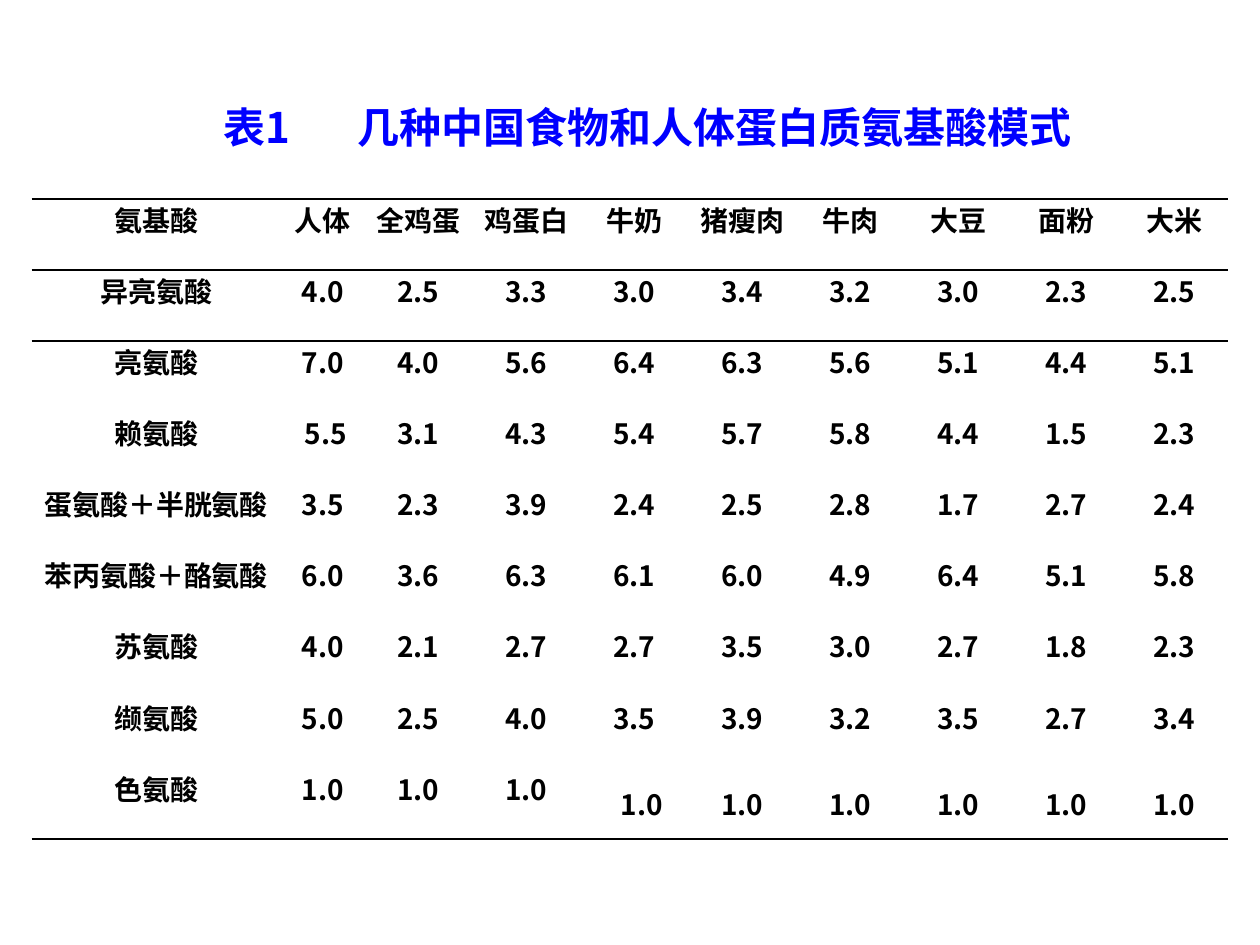
import pptx
import pptx.dml.color
import pptx.enum.text
import pptx.oxml
import pptx.oxml.ns
import pptx.util

Inches = pptx.util.Inches
Pt = pptx.util.Pt
ANCHOR = pptx.enum.text.MSO_ANCHOR
ALIGN = pptx.enum.text.PP_ALIGN
NS = pptx.oxml.ns.nsdecls("a")

COLORS = {"title": "0000FF", "text": "000000", "rule": "000000"}
PLAIN_STYLE = "{2D5ABB26-0587-4C30-8999-92F81FD0307C}"

HEADINGS = ["氨基酸", "人体", "全鸡蛋", "鸡蛋白", "牛奶", "猪瘦肉", "牛肉", "大豆", "面粉", "大米"]
AMINO_ACIDS = {
    "异亮氨酸": [4.0, 2.5, 3.3, 3.0, 3.4, 3.2, 3.0, 2.3, 2.5],
    "亮氨酸": [7.0, 4.0, 5.6, 6.4, 6.3, 5.6, 5.1, 4.4, 5.1],
    "赖氨酸": [5.5, 3.1, 4.3, 5.4, 5.7, 5.8, 4.4, 1.5, 2.3],
    "蛋氨酸＋半胱氨酸": [3.5, 2.3, 3.9, 2.4, 2.5, 2.8, 1.7, 2.7, 2.4],
    "苯丙氨酸＋酪氨酸": [6.0, 3.6, 6.3, 6.1, 6.0, 4.9, 6.4, 5.1, 5.8],
    "苏氨酸": [4.0, 2.1, 2.7, 2.7, 3.5, 3.0, 2.7, 1.8, 2.3],
    "缬氨酸": [5.0, 2.5, 4.0, 3.5, 3.9, 3.2, 3.5, 2.7, 3.4],
    "色氨酸": [1.0] * 9,
}
INDENTS = {(3, 1): 0.05, (8, 4): 0.12}


def set_all(target, values):
    for name, value in values.items():
        setattr(target, name, value)


class Sheet:
    font_name = "Noto Sans CJK SC"

    def __init__(self, deck):
        self.slide = deck.slides.add_slide(deck.slide_layouts[5])

    def wording(self, paragraph, words, size, color, align):
        paragraph.alignment = align
        run = paragraph.add_run()
        run.text = words
        set_all(run.font, {"name": self.font_name, "size": Pt(size), "bold": True})
        run.font.color.rgb = pptx.dml.color.RGBColor.from_string(COLORS[color])
        east_asian = pptx.oxml.parse_xml(f'<a:ea {NS} typeface="{self.font_name}"/>')
        run.font._element.append(east_asian)

    def title(self, words, left, top, width, height, tab):
        heading = self.slide.shapes.title
        set_all(heading, {"left": Inches(left), "top": Inches(top),
                          "width": Inches(width), "height": Inches(height)})
        set_all(heading.text_frame, {
            "word_wrap": True,
            "auto_size": pptx.enum.text.MSO_AUTO_SIZE.NONE,
            "vertical_anchor": ANCHOR.MIDDLE,
        })
        paragraph = heading.text_frame.paragraphs[0]
        self.wording(paragraph, words, 24, "title", ALIGN.LEFT)
        stops = f'<a:tabLst {NS}><a:tab pos="{Inches(tab)}" algn="l"/></a:tabLst>'
        paragraph._p.get_or_add_pPr().append(pptx.oxml.parse_xml(stops))

    def rule(self, cell, sides):
        for position, side in enumerate(sides):
            line = pptx.oxml.parse_xml(
                f'<a:{side} {NS} w="{Pt(1.5)}"><a:solidFill>'
                f'<a:srgbClr val="{COLORS["rule"]}"/></a:solidFill></a:{side}>')
            cell._tc.get_or_add_tcPr().insert(position, line)

    def cell(self, cell, words, anchor, indent):
        set_all(cell, {"margin_left": Inches(0.07), "margin_right": Inches(0.07),
                       "margin_top": 0, "margin_bottom": 0, "vertical_anchor": anchor})
        cell.fill.background()
        paragraph = cell.text_frame.paragraphs[0]
        self.wording(paragraph, words, 16, "text", ALIGN.CENTER)
        if indent:
            paragraph._p.get_or_add_pPr().set("indent", str(Inches(indent)))

    def table(self, rows, left, top, width, height, first_widths):
        last = len(rows) - 1
        columns = len(rows[0])
        rest = (width - sum(first_widths)) / (columns - len(first_widths))
        widths = first_widths + [rest] * (columns - len(first_widths))
        frame = self.slide.shapes.add_table(
            len(rows), columns, Inches(left), Inches(top), Inches(width), Inches(height))
        grid = frame.table
        set_all(grid, {"first_row": False, "horz_banding": False})
        style = grid._tbl.tblPr.find(pptx.oxml.ns.qn("a:tableStyleId"))
        style.text = PLAIN_STYLE
        for column, column_width in zip(grid.columns, widths):
            column.width = Inches(column_width)
        rules = {0: ["lnT", "lnB"], 1: ["lnT"], last: ["lnB"]}
        for r, row in enumerate(rows):
            for c, words in enumerate(row):
                lowered = r == last and c >= 4
                cell = grid.cell(r, c)
                self.cell(cell, words, ANCHOR.MIDDLE if lowered else ANCHOR.TOP,
                          INDENTS.get((r, c)))
                self.rule(cell, rules.get(r, []))


def main():
    deck = pptx.Presentation()
    set_all(deck, {"slide_width": Inches(10), "slide_height": Inches(7.5)})
    sheet = Sheet(deck)
    sheet.title("表1\t几种中国食物和人体蛋白质氨基酸模式", 1.67, 0.75, 7.43, 0.51, tab=1.07)
    rows = [HEADINGS] + [[acid] + [f"{amount:.1f}" for amount in amounts]
                         for acid, amounts in AMINO_ACIDS.items()]
    sheet.table(rows, 0.25, 1.58, 9.5, 5.08, first_widths=[1.98, 0.66])
    deck.save("out.pptx")


if __name__ == "__main__":
    main()
